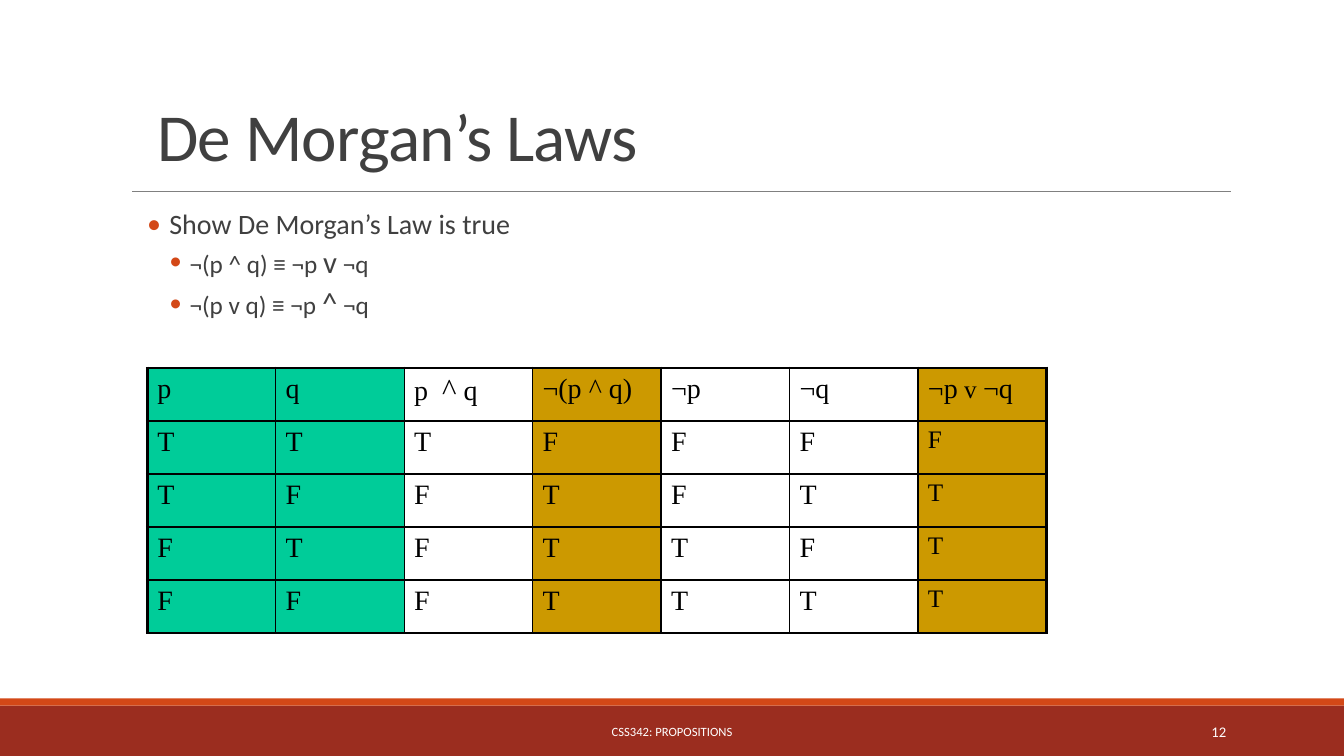
from lxml.etree import SubElement
from pptx import Presentation
from pptx.dml.color import RGBColor
from pptx.enum.shapes import MSO_CONNECTOR, MSO_SHAPE
from pptx.enum.text import MSO_ANCHOR as ANCHOR, PP_ALIGN as ALIGN
from pptx.oxml.ns import qn
from pptx.util import Inches, Pt

COLORS = {"band": "9B2D1F", "accent": "D34817", "rule": "808080",
          "text": "404040", "white": "FFFFFF", "black": "000000",
          "input": "00CC99", "result": "CC9900"}


def rgb(name):
    return RGBColor.from_string(COLORS[name])


def add_runs(p, runs, color, font="Calibri"):
    """Append (text, point size) pairs to a paragraph."""
    for text, size in runs:
        r = p.add_run()
        r.text = text
        r.font.name, r.font.size = font, Pt(size)
        r.font.color.rgb = rgb(color)


prs = Presentation()
prs.slide_width, prs.slide_height = Inches(13.33), Inches(7.5)
s = prs.slides.add_slide(prs.slide_layouts[5])
left = Inches(1.46)

# Footer bands and title rule
for name, top, height in (("band", 7, 0.5), ("accent", 6.93, 0.07)):
    sp = s.shapes.add_shape(MSO_SHAPE.RECTANGLE, 0, Inches(top),
                            prs.slide_width, Inches(height))
    sp.shadow.inherit = False
    sp.fill.solid()
    sp.fill.fore_color.rgb = rgb(name)
    sp.line.fill.background()

rule = s.shapes.add_connector(MSO_CONNECTOR.STRAIGHT, Inches(1.31), Inches(1.9),
                              Inches(12.21), Inches(1.9))
rule.line.color.rgb = rgb("rule")
rule.line.width = Pt(0.5)
SubElement(rule._element.spPr, qn("a:effectLst"))

# Footer text
for text, x, width, size, align in (
        ("CSS342: PROPOSITIONS", 4.03, 5.27, 9, ALIGN.CENTER),
        ("12", 10.83, 1.43, 10.5, ALIGN.RIGHT)):
    tf = s.shapes.add_textbox(Inches(x), Inches(7.06), Inches(width), Inches(0.4)).text_frame
    tf.word_wrap, tf.vertical_anchor = True, ANCHOR.MIDDLE
    tf.paragraphs[0].alignment = align
    add_runs(tf.paragraphs[0], [(text, size)], "white")

# Title
title = s.shapes.title
title.left, title.top, title.width, title.height = left, Inches(0.54), Inches(8.5), Inches(1.25)
title.text_frame.vertical_anchor = ANCHOR.BOTTOM
p = title.text_frame.paragraphs[0]
p.alignment, p.line_spacing = ALIGN.LEFT, 0.85
add_runs(p, [("De Morgan’s Laws", 48)], "text")
p.runs[0].font._element.set("spc", "-50")

# Bulleted laws
tf = s.shapes.add_textbox(left, Inches(2.04), Inches(8.64), Inches(1.36)).text_frame
tf.word_wrap = True
tf.margin_left = tf.margin_right = 0
bullets = [
    (0, [("Show De Morgan’s Law is true", 20)]),
    (1, [("¬(p ^ q) ≡ ¬p ", 18), ("v", 22), (" ¬q", 18)]),
    (1, [("¬(p v q) ≡ ¬p ", 18), ("^", 22), (" ¬q", 18)]),
]
# Per level: left margin and hanging indent (inches), space before and after (points)
levels = [(0.22, 0.22, 12, 2), (0.42, 0.2, 2, 4)]
for i, (level, runs) in enumerate(bullets):
    p = tf.add_paragraph() if i else tf.paragraphs[0]
    margin, hanging, before, after = levels[level]
    p.level, p.line_spacing = level, 0.9
    p.space_before, p.space_after = Pt(before), Pt(after)
    add_runs(p, runs, "text")
    pPr = p._p.get_or_add_pPr()
    pPr.set("marL", str(Inches(margin)))
    pPr.set("indent", str(-Inches(hanging)))
    SubElement(SubElement(pPr, qn("a:buClr")), qn("a:srgbClr"), val=COLORS["accent"])
    SubElement(pPr, qn("a:buFont"), typeface="Calibri")
    SubElement(pPr, qn("a:buChar"), char="•")

# Truth table
header = [[("p", 20)], [("q", 20)], [("p  ", 20), ("^", 22), (" q", 20)],
          [("¬(p ^ q)", 20)], [("¬p", 20)], [("¬q", 20)],
          [("¬p", 20), (" v ", 18), ("¬q", 20)]]
values = ["TTTFFFF", "TFFTFTT", "FTFTTFT", "FFFTTTT"]
fills = ["input", "input", None, "result", None, None, "result"]
last_col = len(header) - 1
last_row = len(values)
rows = [header] + [[[(v, 18 if c == last_col else 20)] for c, v in enumerate(row)]
                   for row in values]

frame = s.shapes.add_table(len(rows), len(header), left, Inches(3.65),
                           Inches(8.92), Inches(2.63))
table = frame.table
table.first_row = table.horz_banding = False
for y, row in enumerate(rows):
    for x, runs in enumerate(row):
        cell = table.cell(y, x)
        p = cell.text_frame.paragraphs[0]
        spacing = SubElement(p._p.get_or_add_pPr(), qn("a:spcBef"))
        SubElement(spacing, qn("a:spcPct"), val="20000")
        add_runs(p, runs, "black", "Times New Roman")
        tcPr = cell._tc.get_or_add_tcPr()
        outer = {"L": x == 0, "R": x == last_col, "T": y == 0, "B": y == last_row}
        for side, is_outer in outer.items():
            ln = SubElement(tcPr, qn("a:ln" + side), w=str(Pt(2.25 if is_outer else 1)))
            SubElement(SubElement(ln, qn("a:solidFill")), qn("a:srgbClr"), val=COLORS["black"])
        if fills[x]:
            cell.fill.solid()
            cell.fill.fore_color.rgb = rgb(fills[x])
        else:
            cell.fill.background()

prs.save("out.pptx")
